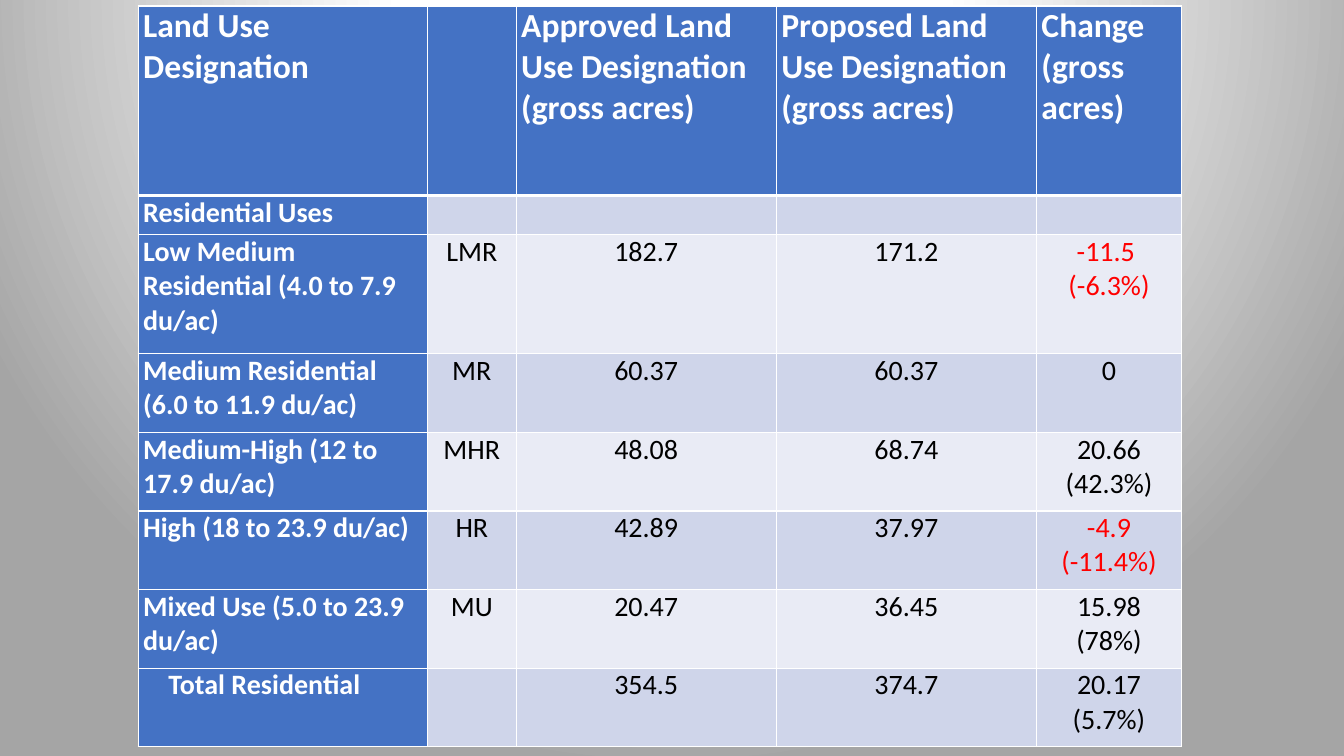
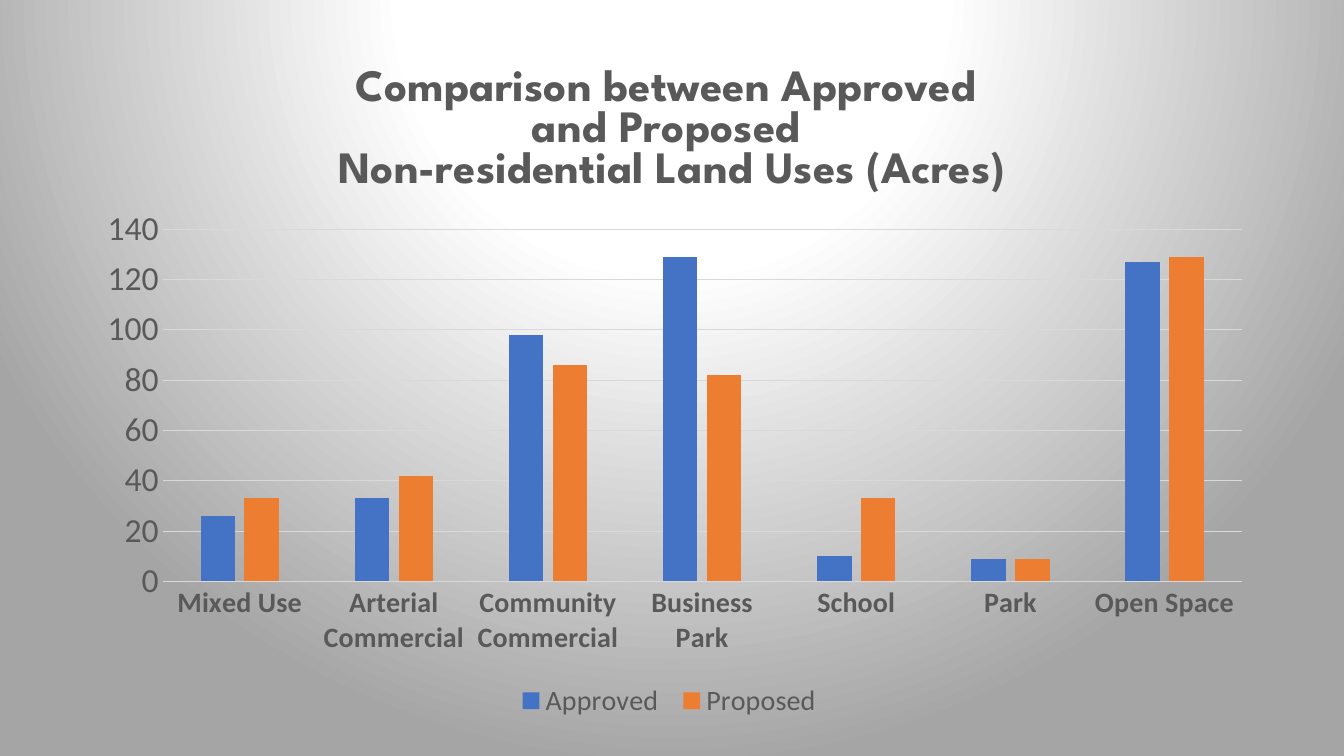
from lxml import etree
from pptx import Presentation
from pptx.chart.data import CategoryChartData
from pptx.dml.color import RGBColor
from pptx.enum.chart import XL_CHART_TYPE, XL_LEGEND_POSITION, XL_TICK_MARK
from pptx.enum.text import PP_ALIGN
from pptx.oxml import parse_xml
from pptx.oxml.ns import nsdecls, qn
from pptx.util import Inches, Pt

COLUMNS = XL_CHART_TYPE.COLUMN_CLUSTERED
LEGEND_BOTTOM = XL_LEGEND_POSITION.BOTTOM
NO_TICK = XL_TICK_MARK.NONE
LEFT, CENTER = PP_ALIGN.LEFT, PP_ALIGN.CENTER

WHITE = RGBColor(0xFF, 0xFF, 0xFF)
BLACK = RGBColor(0x00, 0x00, 0x00)
RED = RGBColor(0xFF, 0x00, 0x00)
BLUE = RGBColor(0x44, 0x72, 0xC4)
ORANGE = RGBColor(0xED, 0x7D, 0x31)
BAND_DARK = RGBColor(0xCF, 0xD5, 0xEA)
BAND_LIGHT = RGBColor(0xE9, 0xEB, 0xF5)
GRAY_BACK = RGBColor(0xA5, 0xA5, 0xA5)
GRAY_TEXT = RGBColor(0x59, 0x59, 0x59)
GRAY_LINE = RGBColor(0xD9, 0xD9, 0xD9)

BODY_FONT = "Calibri"
TITLE_FONT = "League Spartan"

COLUMN_WIDTHS = [2.87, 0.88, 2.58, 2.58, 1.44]
ROW_HEIGHTS = [1.88, 0.39, 1.18] + [0.78] * 5
LAND_USE_ROWS = [
    ["Land Use Designation", "", "Approved Land Use Designation\n(gross acres)",
     "Proposed Land Use Designation (gross acres)", "Change (gross acres)"],
    ["Residential Uses", "", "", "", ""],
    ["Low Medium Residential (4.0 to 7.9 du/ac)", "LMR", "182.7", "171.2", "-11.5 \n(-6.3%)"],
    ["Medium Residential (6.0 to 11.9 du/ac)", "MR", "60.37", "60.37", "0"],
    ["Medium-High (12 to 17.9 du/ac)", "MHR", "48.08", "68.74", "20.66\n(42.3%)"],
    ["High (18 to 23.9 du/ac)", "HR", "42.89", "37.97", "-4.9\n(-11.4%)"],
    ["Mixed Use (5.0 to 23.9 du/ac)", "MU", "20.47", "36.45", "15.98\n(78%)"],
    ["Total Residential", "", "354.5", "374.7", "20.17\n(5.7%)"],
]

CHART_TITLE = "Comparison between Approved \nand Proposed \nNon-residential Land Uses (Acres)"
CATEGORIES = ["Mixed Use", "Arterial Commercial", "Community Commercial",
              "Business Park", "School", "Park", "Open Space"]
SERIES = [
    ("Approved ", [26, 33, 98, 129, 10, 9, 127], BLUE),
    ("Proposed ", [33, 42, 86, 82, 33, 9, 129], ORANGE),
]
# Plot area as shares of the chart box: left, top, width, height
PLOT_AREA = {"x": 0.07, "y": 0.27, "w": 0.91, "h": 0.52}


def set_background(master):
    """Radial gradient shared by every slide."""
    master.background.fill.gradient()
    gradient = master.element.find(".//" + qn("a:gradFill"))
    stops = "".join(
        f'<a:gs pos="{share * 1000}"><a:srgbClr val="{color}"/></a:gs>'
        for share, color in [(0, WHITE), (35, WHITE), (100, GRAY_BACK)])
    gradient.getparent().replace(gradient, parse_xml(
        f'<a:gradFill {nsdecls("a")} rotWithShape="1"><a:gsLst>{stops}</a:gsLst>'
        '<a:path path="circle">'
        '<a:fillToRect l="50000" t="-80000" r="50000" b="180000"/>'
        '</a:path></a:gradFill>'))


def style_font(font, size, color, bold=False, name=BODY_FONT):
    font.name, font.size, font.bold = name, Pt(size), bold
    font.color.rgb = color


def set_borders(cell, top=1, bottom=1):
    """White cell borders; widths in points."""
    properties = cell._tc.get_or_add_tcPr()
    sides = [("lnL", 1), ("lnR", 1), ("lnT", top), ("lnB", bottom)]
    for position, (side, width) in enumerate(sides):
        properties.insert(position, parse_xml(
            f'<a:{side} {nsdecls("a")} w="{Pt(width)}"><a:solidFill>'
            f'<a:srgbClr val="{WHITE}"/></a:solidFill></a:{side}>'))


def fill_cell(cell, text, row, column):
    is_heading = row == 0 or column == 0
    band = BAND_DARK if row % 2 else BAND_LIGHT
    cell.fill.solid()
    cell.fill.fore_color.rgb = BLUE if is_heading else band
    cell.margin_left = cell.margin_right = Inches(0.05)
    cell.margin_top = cell.margin_bottom = 0
    set_borders(cell, top=3 if row == 1 else 1, bottom=3 if row == 0 else 1)

    if not text:
        return
    color = WHITE if is_heading else RED if text.startswith("-") else BLACK
    cell.text_frame.text = text
    for paragraph in cell.text_frame.paragraphs:
        paragraph.alignment = LEFT if is_heading else CENTER
        for run in paragraph.runs:
            style_font(run.font, 24 if row == 0 else 20, color, is_heading)


def add_land_use_table(page, left, top):
    frame = page.shapes.add_table(
        len(ROW_HEIGHTS), len(COLUMN_WIDTHS), Inches(left), Inches(top),
        Inches(sum(COLUMN_WIDTHS)), Inches(sum(ROW_HEIGHTS)))
    table = frame.table
    table.horz_banding = False
    for column, width in zip(table.columns, COLUMN_WIDTHS):
        column.width = Inches(width)
    for row, height in zip(table.rows, ROW_HEIGHTS):
        row.height = Inches(height)
    for row, texts in enumerate(LAND_USE_ROWS):
        for column, text in enumerate(texts):
            fill_cell(table.cell(row, column), text, row, column)

    # The total is indented under the uses
    total = table.cell(len(LAND_USE_ROWS) - 1, 0).text_frame.paragraphs[0]
    total._p.get_or_add_pPr().set("marL", str(Inches(0.25)))


def place_plot_area(chart):
    plot_area = chart._chartSpace.chart.plotArea
    for old_layout in plot_area.findall(qn("c:layout")):
        plot_area.remove(old_layout)
    layout = etree.Element(qn("c:layout"))
    manual = etree.SubElement(layout, qn("c:manualLayout"))
    settings = {"layoutTarget": "inner", "xMode": "edge", "yMode": "edge", **PLOT_AREA}
    for name, value in settings.items():
        etree.SubElement(manual, qn(f"c:{name}")).set("val", str(value))
    plot_area.insert(0, layout)


def style_axes(chart):
    categories, values = chart.category_axis, chart.value_axis
    for axis in (categories, values):
        axis.major_tick_mark = axis.minor_tick_mark = NO_TICK
    style_font(categories.tick_labels.font, 20, GRAY_TEXT, bold=True)
    style_font(values.tick_labels.font, 24, GRAY_TEXT)
    values.minimum_scale, values.maximum_scale, values.major_unit = 0, 140, 20
    values.format.line.fill.background()
    values.has_major_gridlines = True
    for line in (categories.format.line, values.major_gridlines.format.line):
        line.color.rgb = GRAY_LINE
        line.width = Pt(0.75)


def add_comparison_chart(page, left, top, width, height):
    data = CategoryChartData()
    data.categories = CATEGORIES
    for name, values, _ in SERIES:
        data.add_series(name, values)
    chart = page.shapes.add_chart(
        COLUMNS, Inches(left), Inches(top), Inches(width), Inches(height), data).chart
    style_font(chart.font, 10, BLACK)

    # Title
    chart.has_title = True
    chart.chart_title.include_in_layout = False
    title = chart.chart_title.text_frame
    title.text = CHART_TITLE
    for paragraph in title.paragraphs:
        for run in paragraph.runs:
            style_font(run.font, 32, GRAY_TEXT, True, TITLE_FONT)

    # Columns
    plot = chart.plots[0]
    plot.gap_width, plot.overlap, plot.vary_by_categories = 219, -27, False
    for series, (_, _, color) in zip(plot.series, SERIES):
        series.format.fill.solid()
        series.format.fill.fore_color.rgb = color
    style_axes(chart)
    place_plot_area(chart)

    # Legend
    chart.has_legend = True
    chart.legend.position = LEGEND_BOTTOM
    chart.legend.include_in_layout = False
    style_font(chart.legend.font, 20, GRAY_TEXT)


def main():
    deck = Presentation()
    deck.slide_width, deck.slide_height = Inches(13.33), Inches(7.5)
    set_background(deck.slide_master)
    blank = deck.slide_layouts[6]
    add_land_use_table(deck.slides.add_slide(blank), 1.37, 0.06)
    add_comparison_chart(deck.slides.add_slide(blank), 0.79, 0.46, 11.76, 6.72)
    deck.save("out.pptx")


if __name__ == "__main__":
    main()
